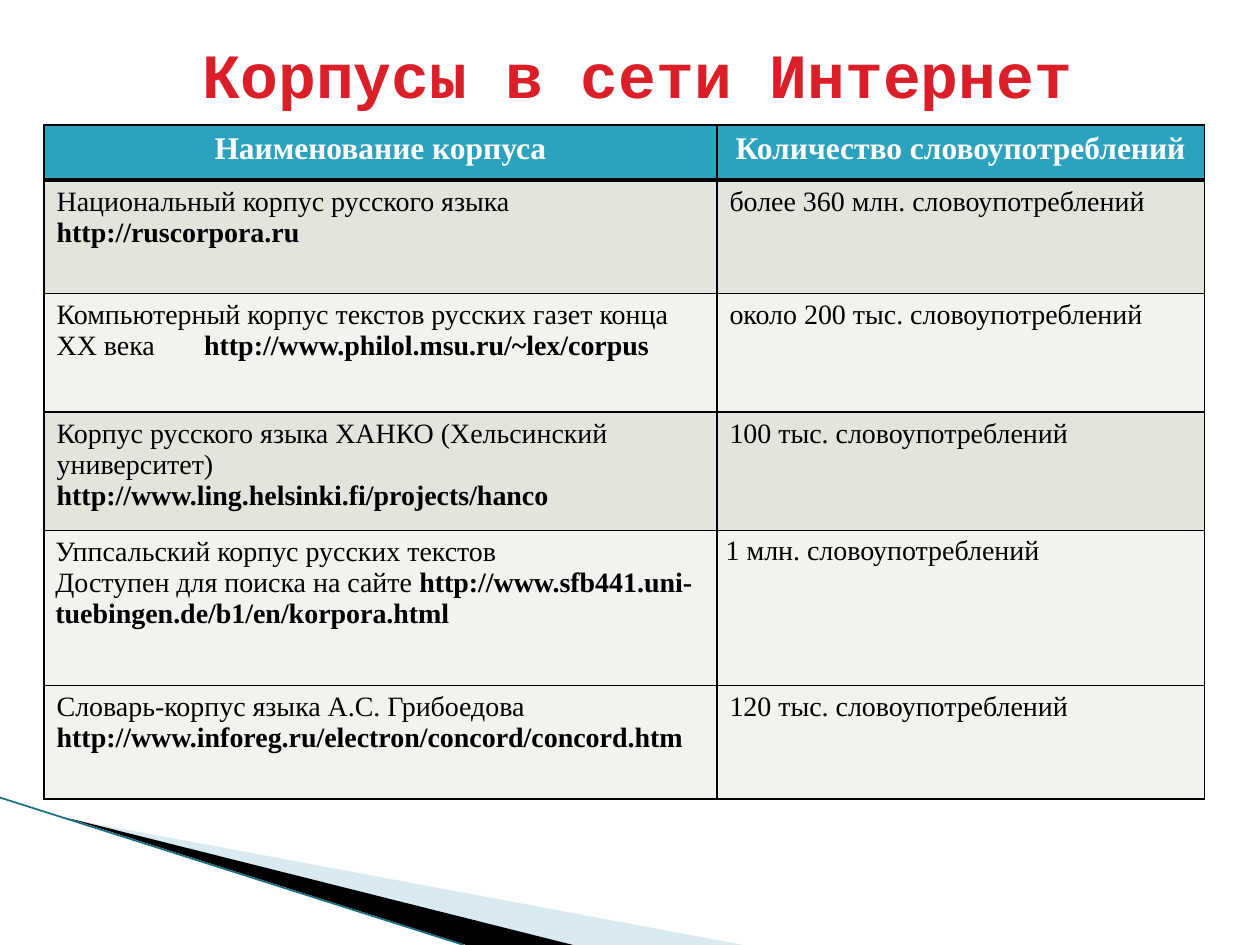
from lxml.etree import SubElement
from pptx import Presentation
from pptx.dml.color import RGBColor
from pptx.enum.text import MSO_ANCHOR, PP_ALIGN
from pptx.oxml.ns import qn
from pptx.util import Inches, Pt

COLORS = {
    "title": "DA1F28", "header": "2DA2BF", "band_dark": "E1E5DC",
    "band_light": "F0F3EE", "black": "000000", "white": "FFFFFF",
    "wedge": "A0CBDC", "edge": "1B6F83",
}
TITLE_FONT = "Courier New"
TABLE_FONT = "Times New Roman"
GAP_TAB = 1.17

HEADER = ["Наименование корпуса", "Количество словоупотреблений"]
# Description, address, word count, row height, band
CORPORA = [
    ("Национальный корпус русского языка \n", "http://ruscorpora.ru",
     "более 360\u00a0млн. словоупотреблений", 0.9, "band_dark"),
    ("Компьютерный корпус текстов русских газет конца ХХ века\t",
     "http://www.philol.msu.ru/~lex/corpus",
     "около 200 тыс. словоупотреблений", 0.94, "band_light"),
    ("Корпус русского языка ХАНКО (Хельсинский университет) ",
     "http://www.ling.helsinki.fi/projects/hanco",
     "100 тыс. словоупотреблений", 0.94, "band_dark"),
    ("Уппсальский корпус русских текстов\nДоступен для поиска на сайте ",
     "http://www.sfb441.uni-tuebingen.de/b1/en/korpora.html",
     "1 млн. словоупотреблений", 1.23, "band_light"),
    ("Словарь-корпус языка А.С. Грибоедова ",
     "http://www.inforeg.ru/electron/concord/concord.htm",
     "120 тыс. словоупотреблений", 0.9, "band_light"),
]
UPPSALA_ROW = 4


def rgb(name):
    return RGBColor.from_string(COLORS[name])


class SlideBuilder:
    def __init__(self, presentation):
        self.slide = presentation.slides.add_slide(presentation.slide_layouts[5])

    def add_run(self, paragraph, text, font, size, color, bold=False):
        """Add text in one style, turning newlines into line breaks."""
        for index, line in enumerate(text.split("\n")):
            if index:
                paragraph.add_line_break()
            if line:
                run = paragraph.add_run()
                run.text = line
                run.font.name = font
                run.font.size = Pt(size)
                run.font.bold = bold
                run.font.color.rgb = rgb(color)

    def title(self, text, left, top, width, height):
        shape = self.slide.shapes.title
        shape.left, shape.top = Inches(left), Inches(top)
        shape.width, shape.height = Inches(width), Inches(height)
        frame = shape.text_frame
        frame.word_wrap = True
        frame.vertical_anchor = MSO_ANCHOR.MIDDLE
        paragraph = frame.paragraphs[0]
        paragraph.alignment = PP_ALIGN.CENTER
        self.add_run(paragraph, text, TITLE_FONT, 36, "title", True)

    def wedge(self, points, color, opacity=None):
        corners = [(Inches(x), Inches(y)) for x, y in points]
        builder = self.slide.shapes.build_freeform(*corners[0])
        builder.add_line_segments(corners[1:], close=True)
        shape = builder.convert_to_shape()
        shape.shadow.inherit = False
        shape.fill.solid()
        shape.fill.fore_color.rgb = rgb(color)
        shape.line.fill.background()
        if opacity:
            color_element = shape.fill._xPr.find(qn("a:solidFill"))[0]
            SubElement(color_element, qn("a:alpha"), val=str(opacity * 1000))

    def line(self, start, end, color, width):
        connector = self.slide.shapes.add_connector(
            1, *(Inches(value) for value in start + end))
        connector.line.color.rgb = rgb(color)
        connector.line.width = Pt(width)
        SubElement(connector._element.spPr, qn("a:effectLst"))

    def table(self, left, top, column_widths, row_heights):
        table = self.slide.shapes.add_table(
            len(row_heights), len(column_widths), Inches(left), Inches(top),
            Inches(sum(column_widths)), Inches(sum(row_heights))).table
        for column, width in zip(table.columns, column_widths):
            column.width = Inches(width)
        for row, height in zip(table.rows, row_heights):
            row.height = Inches(height)
        return table

    def cell(self, cell, runs, fill, size=16, color="black", top_line=1,
             bottom_line=1, side=0.1, vertical=0.05):
        """Fill a cell with (text, bold) runs and return its paragraph."""
        properties = cell._tc.get_or_add_tcPr()
        borders = {"L": 1, "R": 1, "T": top_line, "B": bottom_line}
        for edge, width in borders.items():
            border = SubElement(properties, qn(f"a:ln{edge}"), w=str(Pt(width)))
            solid = SubElement(border, qn("a:solidFill"))
            SubElement(solid, qn("a:srgbClr"), val=COLORS["black"])
        cell.fill.solid()
        cell.fill.fore_color.rgb = rgb(fill)
        cell.margin_left = cell.margin_right = Inches(side)
        cell.margin_top = cell.margin_bottom = Inches(vertical)
        paragraph = cell.text_frame.paragraphs[0]
        for text, bold in runs:
            if "\t" in text:
                tabs = SubElement(paragraph._p.get_or_add_pPr(), qn("a:tabLst"))
                SubElement(tabs, qn("a:tab"), pos=str(Inches(GAP_TAB)), algn="l")
            self.add_run(paragraph, text, TABLE_FONT, size, color, bold)
        return paragraph


def main():
    presentation = Presentation()
    presentation.slide_width = Inches(10)
    presentation.slide_height = Inches(7.5)
    builder = SlideBuilder(presentation)

    builder.wedge([(0.55, 6.5), (5.9, 7.5), (4.56, 7.5)], "wedge", opacity=40)
    builder.wedge([(0.53, 6.49), (4.55, 7.5), (3.7, 7.5)], "black")
    builder.line((0, 6.33), (3.68, 7.5), "edge", 1)

    heights = [0.44] + [corpus[3] for corpus in CORPORA]
    table = builder.table(0.35, 0.99, [5.34, 3.87], heights)
    for column, text in enumerate(HEADER):
        paragraph = builder.cell(table.cell(0, column), [(text, True)], "header",
                                 size=18, color="white", bottom_line=3)
        paragraph.alignment = PP_ALIGN.CENTER

    for row, (name, address, count, _, band) in enumerate(CORPORA, start=1):
        top_line = 3 if row == 1 else 1
        is_uppsala = row == UPPSALA_ROW
        builder.cell(table.cell(row, 0), [(name, False), (address, True)], band,
                     top_line=top_line, side=0.09 if is_uppsala else 0.1)
        paragraph = builder.cell(table.cell(row, 1), [(count, False)], band,
                                 top_line=top_line,
                                 side=0.07 if is_uppsala else 0.1,
                                 vertical=0 if is_uppsala else 0.05)
        if is_uppsala:
            paragraph.line_spacing = 1.15

    builder.title("Корпусы в сети Интернет", 0.51, 0.21, 9.1, 0.74)
    presentation.save("out.pptx")


if __name__ == "__main__":
    main()
